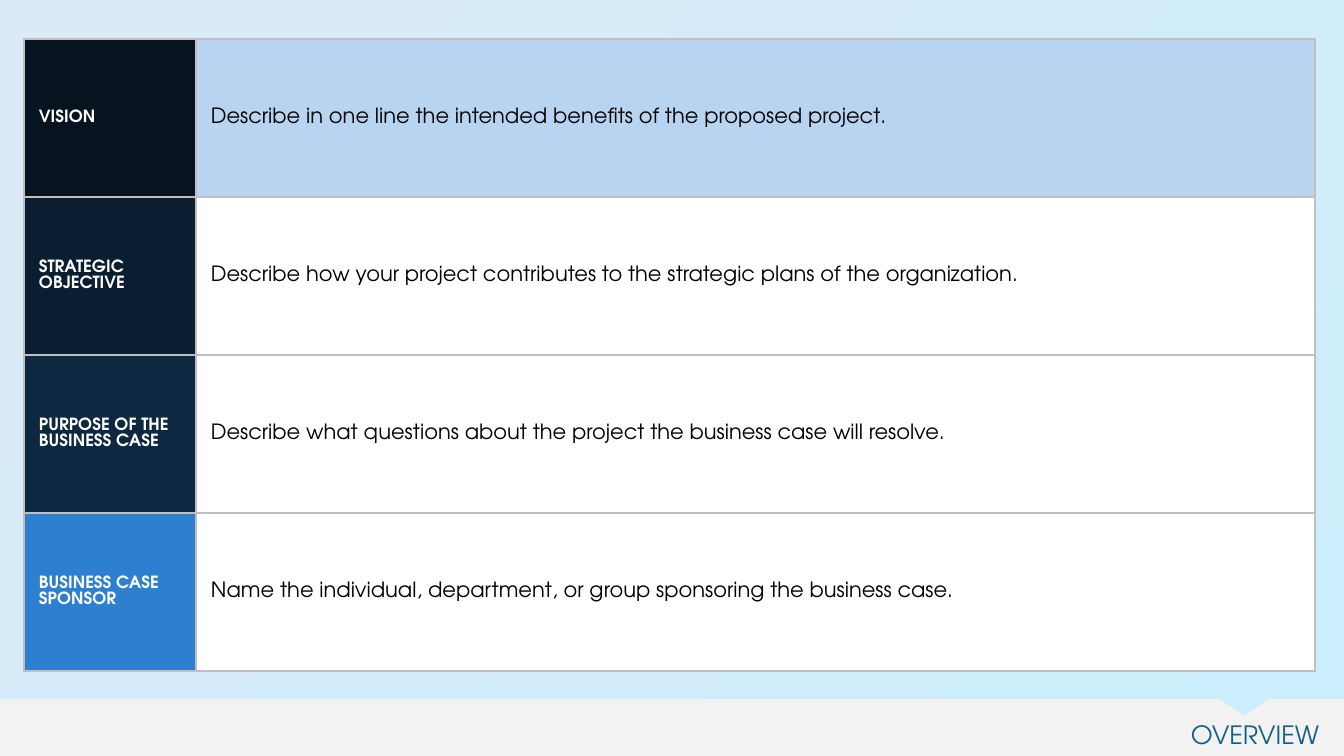
from lxml.etree import SubElement
from pptx import Presentation
from pptx.dml.color import RGBColor
from pptx.enum.text import MSO_ANCHOR, PP_ALIGN
from pptx.oxml.ns import qn
from pptx.util import Emu, Pt

WHITE = RGBColor(0xFF, 0xFF, 0xFF)
BLACK = RGBColor(0, 0, 0)
GREY = RGBColor(0xBF, 0xBF, 0xBF)
FOOTER = RGBColor(0xF2, 0xF2, 0xF2)
TEAL = RGBColor(0x15, 0x60, 0x82)
AQUA = RGBColor(0xCA, 0xEE, 0xFB)
MIST = RGBColor(0xDC, 0xEA, 0xF7)
SKY = RGBColor(0xB8, 0xD4, 0xF0)
INK = RGBColor(0x07, 0x14, 0x20)
NIGHT = RGBColor(0x0B, 0x1E, 0x31)
NAVY = RGBColor(0x0E, 0x28, 0x41)
BLUE = RGBColor(0x2D, 0x7F, 0xCF)

ROWS = [
    ("VISION", INK,
     "Describe in one line the intended benefits of the proposed project.", SKY),
    ("STRATEGIC OBJECTIVE", NIGHT,
     "Describe how your project contributes to the strategic plans of the organization.", WHITE),
    ("PURPOSE OF THE BUSINESS CASE", NAVY,
     "Describe what questions about the project the business case will resolve.", WHITE),
    ("BUSINESS CASE SPONSOR", BLUE,
     "Name the individual, department, or group sponsoring the business case.", WHITE),
]


def px(n):
    return Emu(round(n * 914400 / 100.8))


class Deck:
    """Holds the slide and its style, and draws each kind of element."""

    font = "TeX Gyre Adventor"
    label = {"size": Pt(12), "bold": True}
    body = {"size": Pt(15), "bold": False}
    title = {"size": Pt(18)}

    def __init__(self, width, height):
        self.prs = Presentation()
        self.prs.slide_width, self.prs.slide_height = px(width), px(height)
        self.s = self.prs.slides.add_slide(self.prs.slide_layouts[6])

    def background(self, start, end, angle):
        fill = self.s.background.fill
        fill.gradient()
        fill.gradient_angle = angle
        for stop, color in zip(fill.gradient_stops, (start, end)):
            stop.color.rgb = color

    def add_run(self, tf, text, style, color, align=PP_ALIGN.LEFT):
        p = tf.paragraphs[0]
        p.alignment = align
        r = p.add_run()
        r.text = text
        for name, value in {"name": self.font, **style}.items():
            setattr(r.font, name, value)
        r.font.color.rgb = color

    def border(self, cell, color):
        tc_pr = cell._tc.get_or_add_tcPr()
        for i, side in enumerate(("lnL", "lnR", "lnT", "lnB")):
            ln = tc_pr.makeelement(qn(f"a:{side}"), {"w": str(Pt(1))})
            fill = SubElement(ln, qn("a:solidFill"))
            SubElement(fill, qn("a:srgbClr"), val=str(color))
            tc_pr.insert(i, ln)

    def cell(self, cell, text, fill, style, color):
        cell.fill.solid()
        cell.fill.fore_color.rgb = fill
        cell.vertical_anchor = MSO_ANCHOR.MIDDLE
        for side in ("left", "right", "top", "bottom"):
            setattr(cell, f"margin_{side}", px(15))
        self.add_run(cell.text_frame, text, style, color)
        self.border(cell, GREY)

    def table(self, x, y, widths, row_height, rows):
        table = self.s.shapes.add_table(
            len(rows), len(widths), px(x), px(y),
            px(sum(widths)), px(row_height * len(rows))).table
        for column, width in zip(table.columns, widths):
            column.width = px(width)
        for row, (label, label_fill, text, text_fill) in zip(table.rows, rows):
            row.height = px(row_height)
            self.cell(row.cells[0], label, label_fill, self.label, WHITE)
            self.cell(row.cells[1], text, text_fill, self.body, BLACK)

    def outline(self, points, color):
        builder = self.s.shapes.build_freeform(*points[0], scale=px(1))
        builder.add_line_segments(points[1:], close=True)
        sp = builder.convert_to_shape()
        sp.shadow.inherit = False
        sp.fill.solid()
        sp.fill.fore_color.rgb = color
        sp.line.fill.background()

    def text(self, x, y, w, h, text, color, align):
        tf = self.s.shapes.add_textbox(px(x), px(y), px(w), px(h)).text_frame
        tf.word_wrap = True
        self.add_run(tf, text, self.title, color, align)


def main():
    deck = Deck(1344, 756)
    deck.background(AQUA, MIST, 135)
    deck.table(24, 39, (172, 1119), 158, ROWS)
    deck.outline([(0, 699), (1219, 699), (1245, 716), (1269, 699),
                  (1344, 699), (1344, 756), (0, 756)], FOOTER)
    deck.text(646, 714, 683, 40, "OVERVIEW", TEAL, PP_ALIGN.RIGHT)
    deck.prs.save("out.pptx")


if __name__ == "__main__":
    main()
